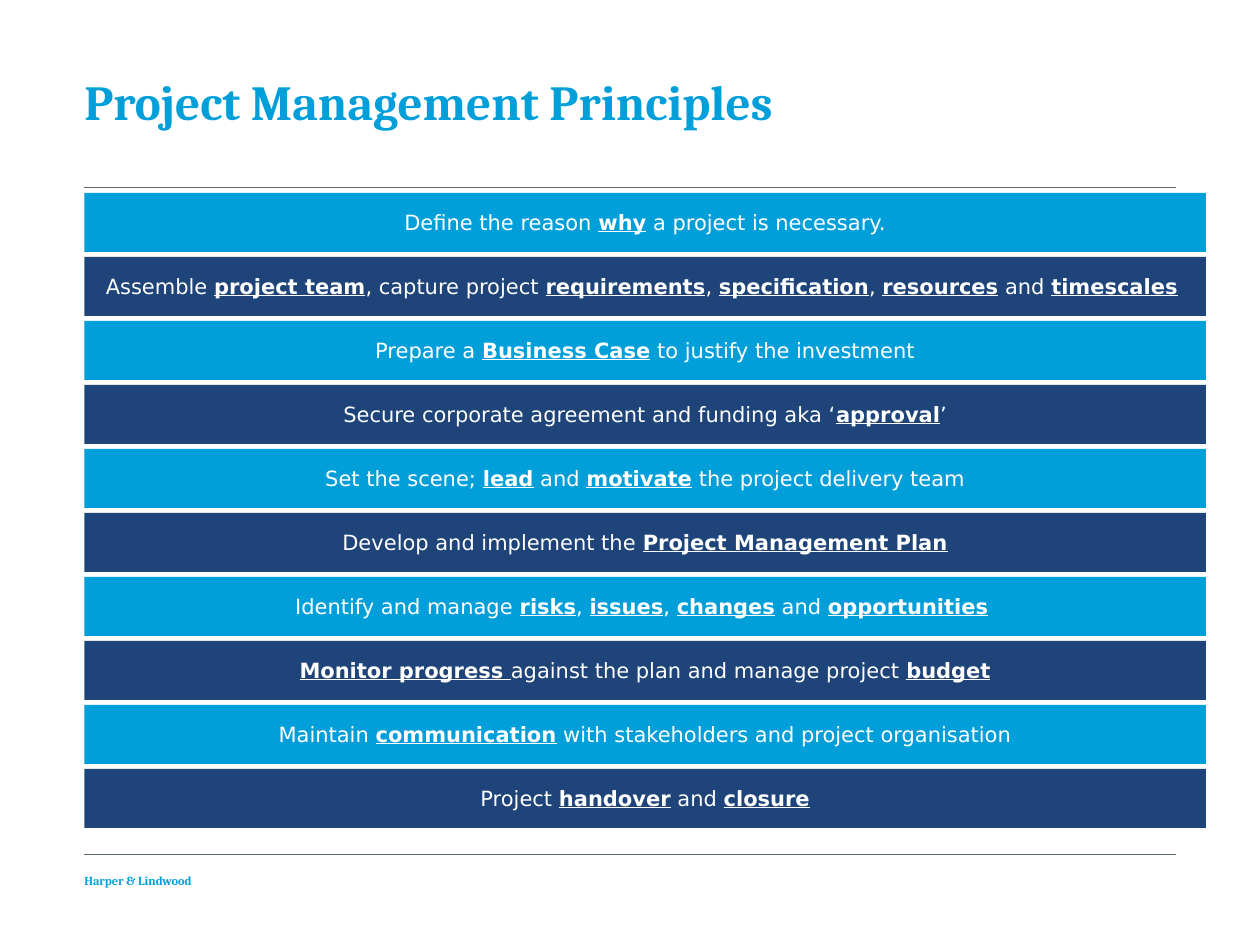
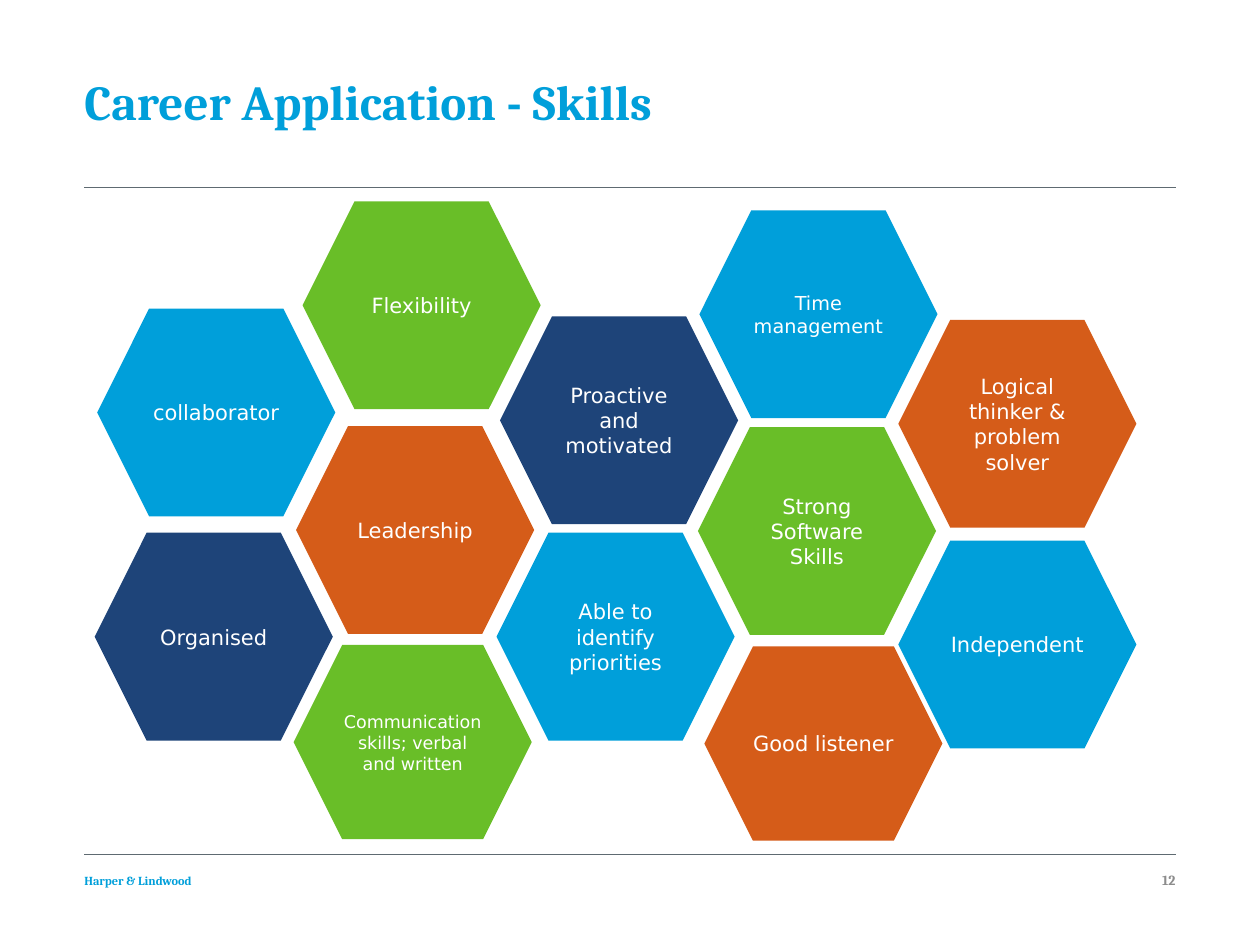
import pptx
import pptx.dml.color
import pptx.enum.shapes
import pptx.enum.text
import pptx.oxml.ns
import pptx.util
from dataclasses import dataclass
from lxml import etree

Cm, Pt = pptx.util.Cm, pptx.util.Pt
RGB = pptx.dml.color.RGBColor.from_string
MSO_SHAPE = pptx.enum.shapes.MSO_SHAPE
ALIGN = pptx.enum.text.PP_ALIGN
ANCHOR = pptx.enum.text.MSO_ANCHOR


@dataclass(frozen=True)
class Theme:
    sky: str = "009FDA"
    navy: str = "1E4479"
    green: str = "69BE28"
    orange: str = "D55C19"
    rule: str = "5E6A71"
    grey: str = "8C8C8C"
    white: str = "FFFFFF"
    heading: str = "Cambria"
    body: str = "DejaVu Sans"
    title_size: int = 28
    body_size: int = 12
    time_size: int = 11
    dense_size: int = 10
    footer_size: int = 7
    number_size: int = 8


T = Theme()

FOOTER = "Harper & Lindwood"
LEFT, RIGHT = 1.7, 23.7
RULES = [3.78, 17.22]

PRINCIPLES = [
    "Define the reason *why* a project is necessary.",
    "Assemble *project team*, capture project *requirements*, "
    "*specification*, *resources* and *timescales* ",
    "Prepare a *Business Case* to justify the investment",
    "Secure corporate agreement and funding aka ‘*approval*’",
    "Set the scene; *lead* and *motivate* the project delivery team",
    "Develop and implement the *Project Management Plan*",
    "Identify and manage *risks*, *issues*, *changes* and *opportunities* ",
    "*Monitor progress *against the plan and manage project *budget*",
    "Maintain *communication* with stakeholders and project organisation",
    "Project *handover* and *closure*",
]
BAR_TOP, BAR_PITCH, BAR_WIDTH, BAR_HEIGHT = 3.89, 1.29, 22.61, 1.19

HEX_WIDTH, HEX_HEIGHT, LOW_HEIGHT = 4.8, 4.19, 3.92
SKILLS = [
    ("collaborator", 1.96, 6.22, HEX_HEIGHT, T.sky, T.body_size),
    ("Organised", 1.91, 10.74, HEX_HEIGHT, T.navy, T.body_size),
    ("Flexibility", 6.1, 4.06, HEX_HEIGHT, T.green, T.body_size),
    ("Leadership", 5.97, 8.59, HEX_HEIGHT, T.orange, T.body_size),
    ("Communication skills; verbal and written", 5.92, 13.0, LOW_HEIGHT,
     T.green, T.dense_size),
    ("Proactive and motivated", 10.08, 6.38, HEX_HEIGHT, T.navy, T.body_size),
    ("Able to identify priorities", 10.01, 10.74, HEX_HEIGHT, T.sky, T.body_size),
    ("Time management", 14.1, 4.24, HEX_HEIGHT, T.sky, T.time_size),
    ("Strong Software Skills", 14.07, 8.61, HEX_HEIGHT, T.green, T.body_size),
    ("Good listener", 14.2, 13.03, LOW_HEIGHT, T.orange, T.body_size),
    ("Logical thinker & problem solver", 18.11, 6.45, HEX_HEIGHT,
     T.orange, T.body_size),
    ("Independent", 18.11, 10.9, HEX_HEIGHT, T.sky, T.body_size),
]


def write(tf, text, font, size, color, bold=None, align=ALIGN.LEFT):
    tf.word_wrap = True
    tf.vertical_anchor = ANCHOR.MIDDLE
    p = tf.paragraphs[0]
    p.alignment = align
    p.font.name, p.font.size, p.font.bold = font, Pt(size), bold
    p.font.color.rgb = RGB(color)
    for i, part in enumerate(text.split("*")):
        if part:
            r = p.add_run()
            r.text = part
            if i % 2:
                r.font.bold = r.font.underline = True


def write_heading(tf, text, size, color, align=ALIGN.LEFT):
    tf.margin_left = tf.margin_right = tf.margin_top = tf.margin_bottom = 0
    tf.auto_size = pptx.enum.text.MSO_AUTO_SIZE.NONE
    write(tf, text, T.heading, size, color, True, align)


def add_small_print(s, text, left, width, size, color, align=ALIGN.LEFT):
    box = s.shapes.add_textbox(Cm(left), Cm(17.4), Cm(width), Cm(0.69))
    write_heading(box.text_frame, text, size, color, align)


def add_rule(s, y):
    line = s.shapes.add_connector(pptx.enum.shapes.MSO_CONNECTOR.STRAIGHT,
                                  Cm(LEFT), Cm(y), Cm(RIGHT), Cm(y))
    line.line.color.rgb = RGB(T.rule)
    line.line.width = Pt(0.25)
    etree.SubElement(line._element.spPr, pptx.oxml.ns.qn("a:effectLst"))


def add_block(s, kind, left, top, width, height, fill, text, size):
    sp = s.shapes.add_shape(kind, Cm(left), Cm(top), Cm(width), Cm(height))
    sp.shadow.inherit = False
    sp.fill.solid()
    sp.fill.fore_color.rgb = RGB(fill)
    sp.line.fill.background()
    write(sp.text_frame, text, T.body, size, T.white, align=ALIGN.CENTER)


def add_slide(prs, title):
    s = prs.slides.add_slide(prs.slide_layouts[5])
    sp = s.shapes.title
    sp.left, sp.top, sp.width, sp.height = Cm(LEFT), Cm(0.74), Cm(22), Cm(2.59)
    write_heading(sp.text_frame, title, T.title_size, T.sky)
    for y in RULES:
        add_rule(s, y)
    add_small_print(s, FOOTER, LEFT, 6.81, T.footer_size, T.sky)
    return s


def build_principles(prs):
    s = add_slide(prs, "Project Management Principles")
    for i, text in enumerate(PRINCIPLES):
        add_block(s, MSO_SHAPE.RECTANGLE, LEFT, BAR_TOP + i * BAR_PITCH,
                  BAR_WIDTH, BAR_HEIGHT, (T.sky, T.navy)[i % 2], text, T.body_size)


def build_skills(prs):
    s = add_slide(prs, "Career Application - Skills")
    add_small_print(s, "12", 22.73, 0.97, T.number_size, T.grey, ALIGN.RIGHT)
    for text, left, top, height, fill, size in SKILLS:
        add_block(s, MSO_SHAPE.HEXAGON, left, top, HEX_WIDTH, height, fill, text, size)


def main():
    prs = pptx.Presentation()
    prs.slide_width, prs.slide_height = Cm(25.4), Cm(19.05)
    build_principles(prs)
    build_skills(prs)
    prs.save("out.pptx")


if __name__ == "__main__":
    main()
